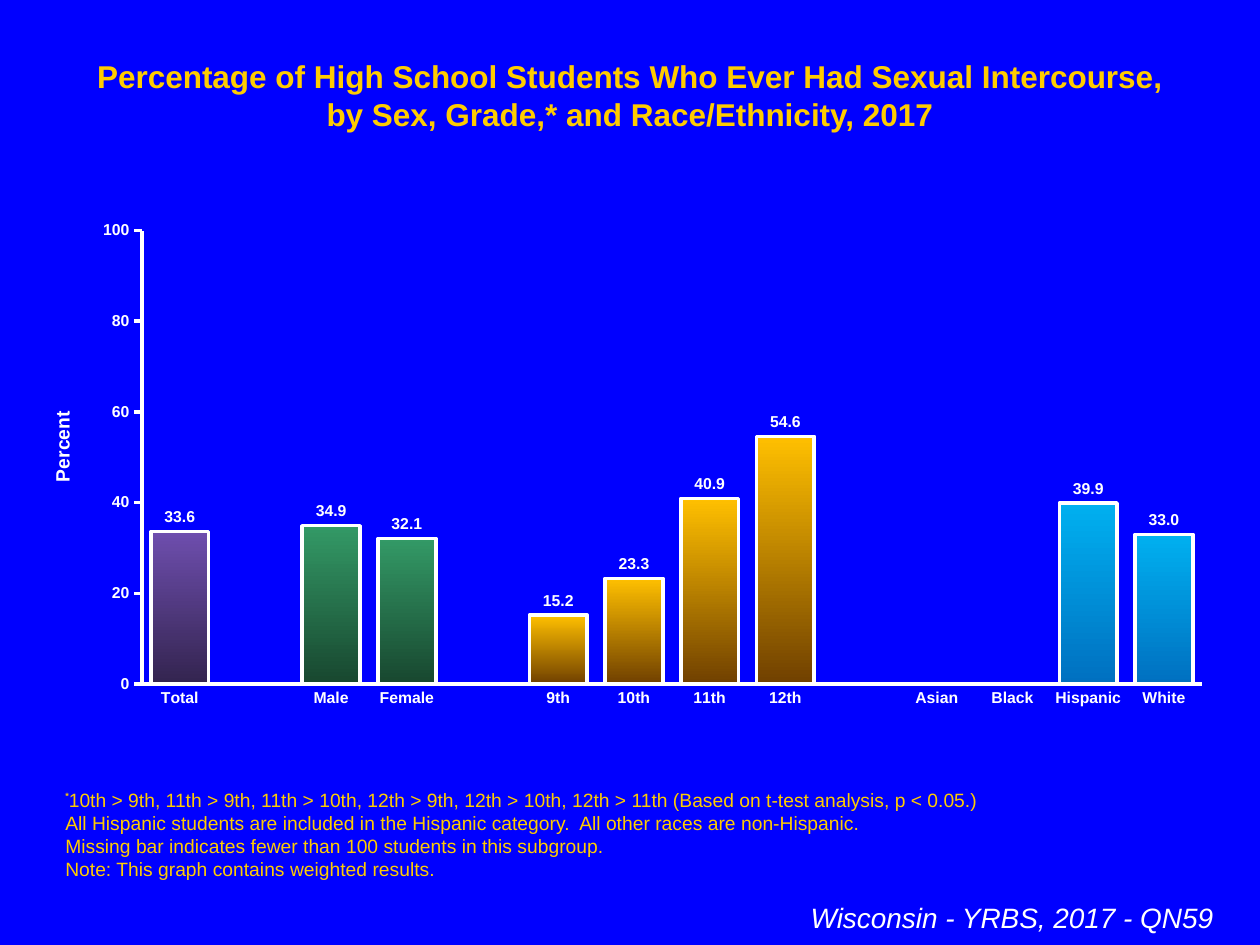
import dataclasses

import pptx
import pptx.chart.data
import pptx.dml.color
import pptx.enum.chart
import pptx.enum.text
import pptx.oxml
import pptx.oxml.ns
import pptx.util

Inches = pptx.util.Inches
Pt = pptx.util.Pt
Align = pptx.enum.text.PP_ALIGN
Anchor = pptx.enum.text.MSO_ANCHOR
Tick = pptx.enum.chart.XL_TICK_MARK


@dataclasses.dataclass(frozen=True)
class Theme:
    font: str = "Arial"
    back: str = "0000FF"
    gold: str = "FFCC00"
    white: str = "FFFFFF"
    title: int = 18
    foot: int = 16
    note: int = 11
    star: int = 9
    axis: int = 9
    total: tuple = ("6E4EAE", "33244F")
    sex: tuple = ("339966", "18472F")
    grade: tuple = ("FFC000", "704000")
    race: tuple = ("00B0F0", "0070C0")


theme = Theme()
rgb = pptx.dml.color.RGBColor.from_string


def write(para, text, size, color, bold=False, italic=False, rise=0):
    """Add a run; rise lifts it by a percentage of its size."""
    run = para.add_run()
    run.text = text
    font = run.font
    font.name, font.size = theme.font, Pt(size)
    font.bold, font.italic = bold, italic
    font.color.rgb = rgb(color)
    if rise:
        run._r.get_or_add_rPr().set("baseline", str(rise * 1000))


def place(item, x, y, w, h):
    """Add a manual chart layout, in fractions of the chart; w and h may be None."""
    ns = pptx.oxml.ns.nsdecls("c")
    inner = '<c:layoutTarget val="inner"/>' if w else ""
    size = f'<c:w val="{w}"/><c:h val="{h}"/>' if w else ""
    layout = pptx.oxml.parse_xml(
        f'<c:layout {ns}><c:manualLayout>{inner}<c:xMode val="edge"/><c:yMode val="edge"/>'
        f'<c:x val="{x}"/><c:y val="{y}"/>{size}</c:manualLayout></c:layout>')
    for old in item.findall(pptx.oxml.ns.qn("c:layout")):
        item.remove(old)
    text = item.find(pptx.oxml.ns.qn("c:tx"))
    item.insert(0 if text is None else 1, layout)


deck = pptx.Presentation()
deck.slide_width, deck.slide_height = Inches(10), Inches(7.5)
slide = deck.slides.add_slide(deck.slide_layouts[5])
slide.background.fill.solid()
slide.background.fill.fore_color.rgb = rgb(theme.back)

# Title
title = slide.shapes.title
title.left, title.top = Inches(0.5), Inches(0.4)
title.width, title.height = Inches(9), Inches(0.7)
title.text_frame.vertical_anchor = Anchor.TOP
head = title.text_frame.paragraphs[0]
head.alignment = Align.CENTER
write(head, "Percentage of High School Students Who Ever Had Sexual Intercourse, "
      "by Sex, Grade,* and Race/Ethnicity, 2017", theme.title, theme.gold, bold=True)

# Chart: groups of bars, with an empty category between groups
groups = [
    (theme.total, [("Total", 33.6)]),
    (theme.sex, [("Male", 34.9), ("Female", 32.1)]),
    (theme.grade, [("9th", 15.2), ("10th", 23.3), ("11th", 40.9), ("12th", 54.6)]),
    (theme.race, [("Asian", None), ("Black", None), ("Hispanic", 39.9), ("White", 33.0)]),
]
bars = []
for shades, rows in groups:
    if bars:
        bars.append(("", None, None))
    bars += [(name, value, shades) for name, value in rows]

data = pptx.chart.data.CategoryChartData(number_format="#,##0.0")
data.categories = [name for name, _, _ in bars]
data.add_series("Series 1", [value for _, value, _ in bars])
chart = slide.shapes.add_chart(
    pptx.enum.chart.XL_CHART_TYPE.COLUMN_CLUSTERED,
    Inches(0.17), Inches(1.67), Inches(9.56), Inches(4), data).chart
chart.has_legend = chart.has_title = False
chart.font.name, chart.font.size = theme.font, Pt(theme.axis)
chart.font.bold = True
chart.font.color.rgb = rgb(theme.white)
place(chart._chartSpace.chart.plotArea, 0.1, 0.04, 0.88, 0.9)

cats, vals = chart.category_axis, chart.value_axis
for axis, tick in ((cats, Tick.NONE), (vals, Tick.OUTSIDE)):
    axis.has_major_gridlines = False
    axis.major_tick_mark, axis.minor_tick_mark = tick, Tick.NONE
    axis.format.line.width = Pt(2)
    axis.format.line.color.rgb = rgb(theme.white)
vals.minimum_scale, vals.maximum_scale, vals.major_unit = 0, 100, 20
vals.tick_labels.number_format = "General"
vals.tick_labels.number_format_is_linked = False
label = vals.axis_title
write(label.text_frame.paragraphs[0], "Percent", theme.note, theme.white, bold=True)
place(label._element, 0.02, 0.39, None, None)

plot = chart.plots[0]
plot.vary_by_categories = False
plot.gap_width, plot.overlap = 31, 100
plot.has_data_labels = True
tags = plot.data_labels
tags.show_value = True
tags.number_format, tags.number_format_is_linked = "#,##0.0", False
tags.position = pptx.enum.chart.XL_LABEL_POSITION.OUTSIDE_END
tags.font.name, tags.font.size, tags.font.bold = theme.font, Pt(theme.axis), True
tags.font.color.rgb = rgb(theme.white)

for i, (_, _, shades) in enumerate(bars):
    if shades:
        form = plot.series[0].points[i].format
        form.fill.gradient()
        form.fill.gradient_angle = 270
        for stop, shade in zip(form.fill.gradient_stops, shades):
            stop.color.rgb = rgb(shade)
        form.line.width = Pt(2)
        form.line.color.rgb = rgb(theme.white)

# Footnotes
notes = slide.shapes.add_textbox(Inches(0.42), Inches(6.2), Inches(9.17), Inches(0.84)).text_frame
notes.word_wrap = True
notes.vertical_anchor = Anchor.BOTTOM
lines = [
    "10th > 9th, 11th > 9th, 11th > 10th, 12th > 9th, 12th > 10th, 12th > 11th "
    "(Based on t-test analysis, p < 0.05.)",
    "All Hispanic students are included in the Hispanic category.  All other races are non-Hispanic.",
    "Missing bar indicates fewer than 100 students in this subgroup.",
    "Note: This graph contains weighted results.",
]
write(notes.paragraphs[0], "*", theme.star, theme.gold, bold=True, rise=50)
for i, line in enumerate(lines):
    para = notes.add_paragraph() if i else notes.paragraphs[0]
    write(para, line, theme.note, theme.gold)

# Source line
foot = slide.shapes.add_textbox(Inches(0.33), Inches(7.1), Inches(9.4), Inches(0.37)).text_frame
foot.word_wrap = True
foot.paragraphs[0].alignment = Align.RIGHT
write(foot.paragraphs[0], "Wisconsin - YRBS, 2017 - QN59", theme.foot, theme.white, italic=True)

deck.save("out.pptx")
